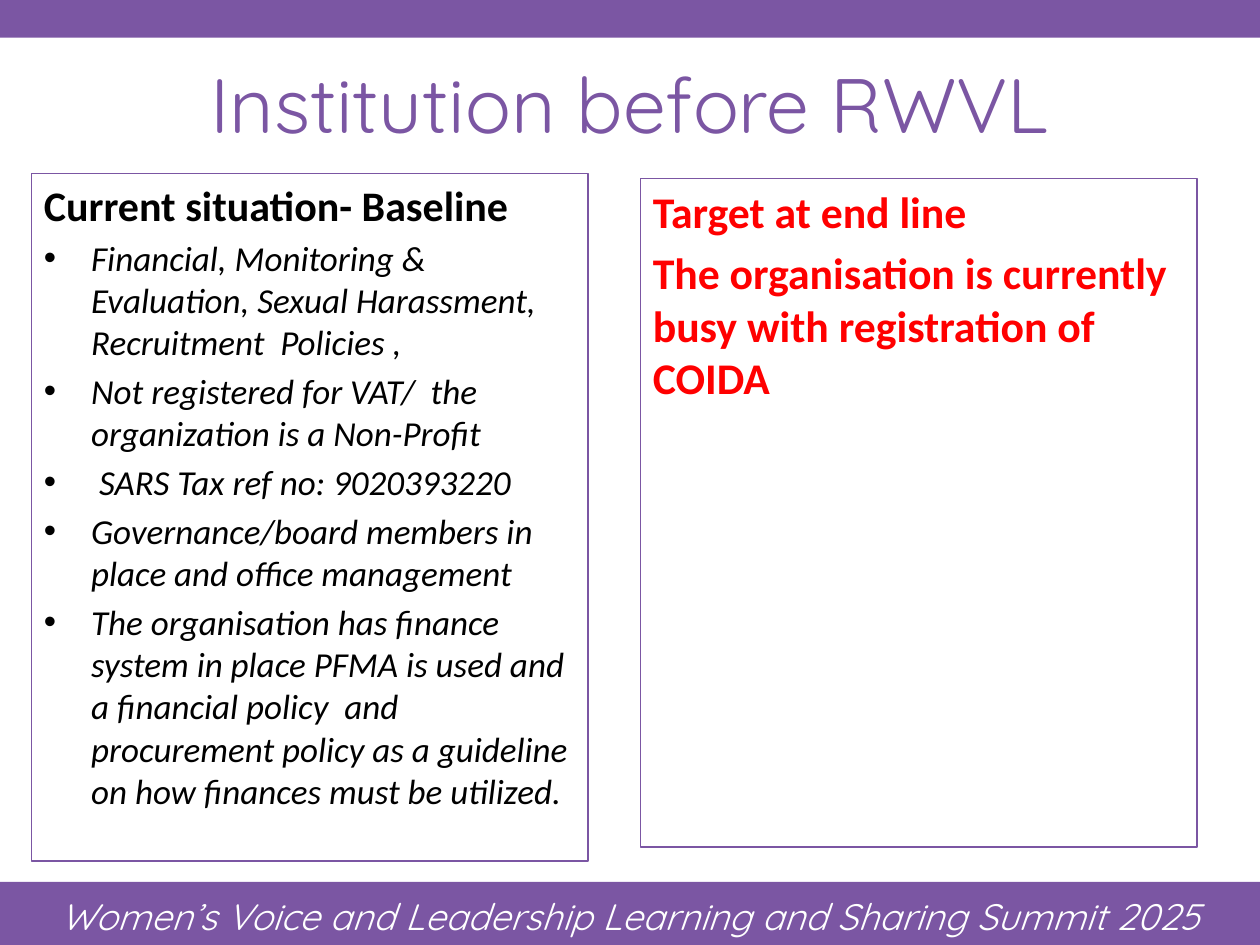
from lxml import etree
from pptx import Presentation
from pptx.dml.color import RGBColor
from pptx.enum import shapes, text
from pptx.oxml.ns import qn
from pptx.util import Pt

PURPLE, WHITE, BLACK, RED = "7B56A3", "FFFFFF", "000000", "FF0000"
WIDTH, HEIGHT = 720, 540
INDENT = 27

BASELINE = [
    "Financial, Monitoring & Evaluation, Sexual Harassment, Recruitment  Policies ,",
    "Not registered for VAT/  the organization is a Non-Profit",
    " SARS Tax ref no: 9020393220",
    "Governance/board members in place and office management",
    "The organisation has finance system in place PFMA is used and a financial policy  "
    "and procurement policy as a guideline on how finances must be utilized.",
]
TARGET = "The organisation is currently busy with registration of COIDA"


def color(value):
    return RGBColor.from_string(value)


def add_rectangle(slide, box, fill=None, line=None):
    shape = slide.shapes.add_shape(shapes.MSO_SHAPE.RECTANGLE, *map(Pt, box))
    shape.shadow.inherit = False
    if fill:
        shape.fill.solid()
        shape.fill.fore_color.rgb = color(fill)
    else:
        shape.fill.background()
    if line:
        shape.line.color.rgb = color(line)
        shape.line.width = Pt(0.75)
    else:
        shape.line.fill.background()
    return shape


def add_text_box(slide, box, anchor):
    frame = slide.shapes.add_textbox(*map(Pt, box)).text_frame
    frame.word_wrap = True
    frame.vertical_anchor = anchor
    return frame


def add_bullet(paragraph):
    properties = paragraph._p.get_or_add_pPr()
    properties.set("marL", str(Pt(INDENT)))
    properties.set("indent", str(-Pt(INDENT)))
    etree.SubElement(properties, qn("a:buFont"), typeface="Arial")
    etree.SubElement(properties, qn("a:buChar"), char="•")


def write(frame, words, size, ink, font="Calibri", bold=False, italic=False,
          align=text.PP_ALIGN.LEFT, before=0, spacing=None, bullet=False):
    """Fill the empty first paragraph of the frame, or append a new one."""
    paragraph = frame.paragraphs[-1]
    if paragraph.runs:
        paragraph = frame.add_paragraph()
    paragraph.alignment = align
    paragraph.space_before = Pt(before)
    if spacing:
        paragraph.line_spacing = spacing
    if bullet:
        add_bullet(paragraph)
    run = paragraph.add_run()
    run.text = words
    run.font.name = font
    run.font.size = Pt(size)
    run.font.bold = bold
    run.font.italic = italic
    run.font.color.rgb = color(ink)


def add_title(slide, box):
    frame = add_text_box(slide, box, text.MSO_ANCHOR.MIDDLE)
    write(frame, "Institution before RWVL", 44, PURPLE, font="Quicksand",
          align=text.PP_ALIGN.CENTER)


def add_footer(slide, box):
    add_rectangle(slide, box, fill=PURPLE)
    left, top, width, height = box
    margin = 12
    frame = add_text_box(slide, (left + margin, top + 1.5, width - 2 * margin, height - 1.5),
                         text.MSO_ANCHOR.TOP)
    write(frame, "Women’s Voice and Leadership Learning and Sharing Summit 2025", 21, WHITE,
          font="Quicksand", italic=True, align=text.PP_ALIGN.CENTER, spacing=1.07)


def add_panel(slide, box, heading, items, ink, heading_size, item_size, **item_format):
    frame = add_rectangle(slide, box, line=PURPLE).text_frame
    frame.word_wrap = True
    frame.vertical_anchor = text.MSO_ANCHOR.TOP
    write(frame, heading, heading_size, ink, bold=True, before=heading_size * 0.2)
    for item in items:
        write(frame, item, item_size, ink, before=item_size * 0.2, **item_format)


def main():
    presentation = Presentation()
    presentation.slide_width, presentation.slide_height = Pt(WIDTH), Pt(HEIGHT)
    slide = presentation.slides.add_slide(presentation.slide_layouts[6])

    add_rectangle(slide, (0, 0, WIDTH, 21.5), fill=PURPLE)
    add_footer(slide, (0, 504, WIDTH, 36))
    add_title(slide, (0, 26, WIDTH, 66))
    add_panel(slide, (18, 99, 318, 393), "Current situation- Baseline", BASELINE,
              BLACK, 24, 20, italic=True, bullet=True)
    add_panel(slide, (366, 102, 318, 382), "Target at end line", [TARGET],
              RED, 25, 25, bold=True)

    presentation.save("out.pptx")


if __name__ == "__main__":
    main()
